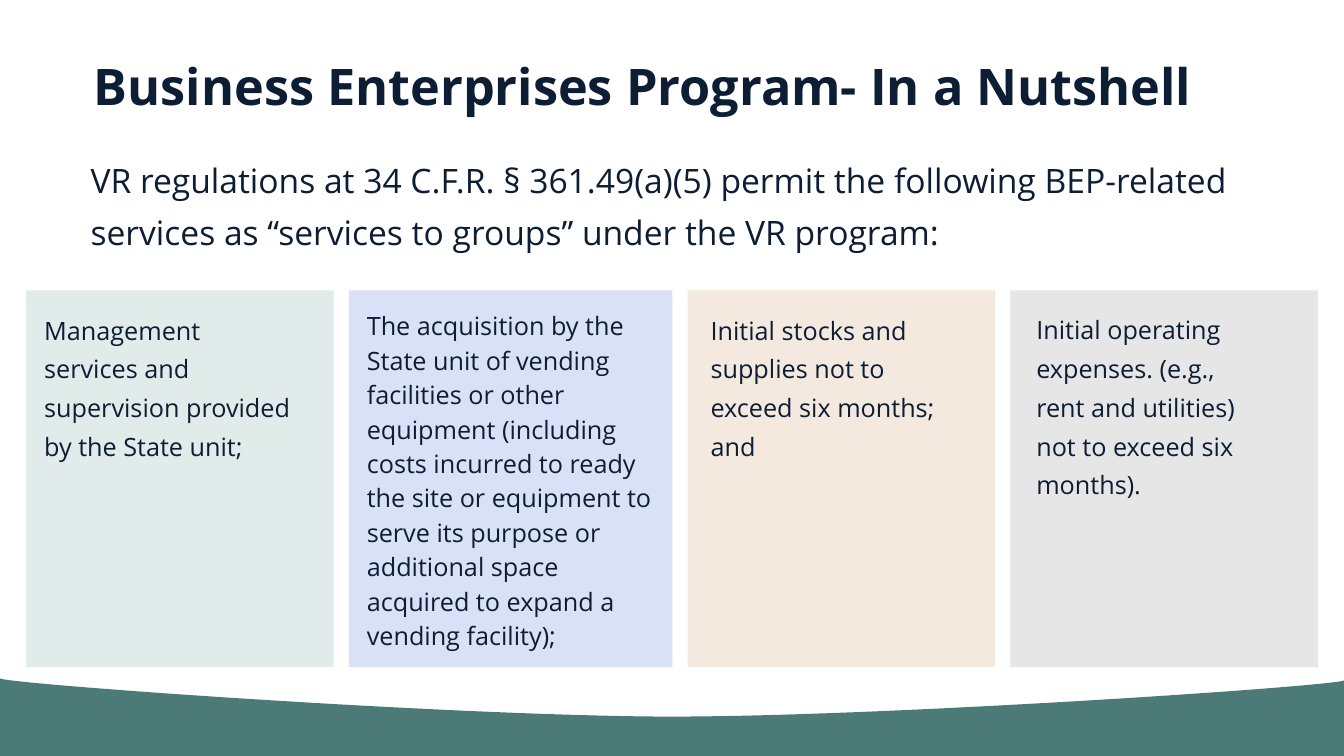
from dataclasses import dataclass

from pptx import Presentation
from pptx.dml.color import RGBColor
from pptx.enum import shapes, text
from pptx.util import Inches, Pt


@dataclass(frozen=True)
class Theme:
    font: str = "Open Sans"
    ink: str = "0D1D34"
    wave: str = "4C7A76"
    title_size: int = 36
    intro_size: int = 24
    card_size: int = 18


@dataclass(frozen=True)
class Box:
    left: float
    top: float
    width: float
    height: float


@dataclass(frozen=True)
class Card:
    words: str
    fill: str
    width: float
    text_offset: float
    text_width: float
    text_height: float
    line_spacing: float = 1.28


THEME = Theme()
SLIDE_WIDTH, SLIDE_HEIGHT = 13.33, 7.5
TITLE_BOX = Box(0.8, 0.4, 11.76, 1.35)
INTRO_BOX = Box(0.8, 1.43, 11.76, 1.13)
CARD_LEFT, CARD_TOP, CARD_HEIGHT, CARD_GAP = 0.26, 2.88, 3.74, 0.15
CARD_TEXT_TOP = 2.99
# Each curve holds a start, two control points and an end.
WAVE_CURVES = (
    ((0, 6.73), (0, 6.78), (4.4, 7.1), (6.62, 7.11)),
    ((6.62, 7.11), (8.85, 7.11), (13.33, 6.8), (13.33, 6.75)),
)
CURVE_STEPS = 40

TITLE = "Business Enterprises Program- In a Nutshell"
INTRO = (
    "VR regulations at 34 C.F.R. § 361.49(a)(5) permit the following BEP-related "
    "services as “services to groups” under the VR program:"
)
CARDS = (
    Card("Management services and supervision provided by the State unit;",
         "E0EBEA", 3.05, 0.08, 2.72, 1.62),
    Card("The acquisition by the State unit of vending facilities or other equipment "
         "(including costs incurred to ready the site or equipment to serve its purpose "
         "or additional space acquired to expand a vending facility);",
         "D9E1F7", 3.21, 0.08, 3.13, 3.53, 1.14),
    Card("Initial stocks and supplies not to exceed six months; and",
         "F3E9DE", 3.05, 0.13, 2.57, 1.62),
    Card("Initial operating expenses. (e.g., rent and utilities) not to exceed six months).",
         "E6E6E6", 3.05, 0.16, 2.38, 2.04),
)


def lengths(box: Box) -> tuple:
    return tuple(Inches(value) for value in (box.left, box.top, box.width, box.height))


def paint(shape, color: str) -> None:
    shape.shadow.inherit = False
    shape.fill.solid()
    shape.fill.fore_color.rgb = RGBColor.from_string(color)
    shape.line.fill.background()


def write(shape, words: str, size: int, line_spacing: float, bold: bool = False,
          inset_x: float = 0.1, inset_y: float = 0.05, grow: bool = False) -> None:
    fit = text.MSO_AUTO_SIZE
    frame = shape.text_frame
    frame_format = {
        "word_wrap": True,
        "auto_size": fit.SHAPE_TO_FIT_TEXT if grow else fit.NONE,
        "vertical_anchor": text.MSO_ANCHOR.TOP,
        "margin_left": Inches(inset_x),
        "margin_right": Inches(inset_x),
        "margin_top": Inches(inset_y),
        "margin_bottom": Inches(inset_y),
    }
    for name, value in frame_format.items():
        setattr(frame, name, value)
    paragraph = frame.paragraphs[0]
    paragraph.alignment = text.PP_ALIGN.LEFT
    paragraph.line_spacing = line_spacing
    run = paragraph.add_run()
    run.text = words
    for name, value in {"name": THEME.font, "size": Pt(size), "bold": bold}.items():
        setattr(run.font, name, value)
    run.font.color.rgb = RGBColor.from_string(THEME.ink)


def curve_point(curve: tuple, t: float) -> tuple[float, float]:
    """Return the point at share t of a cubic Bezier curve."""
    weights = ((1 - t) ** 3, 3 * t * (1 - t) ** 2, 3 * t ** 2 * (1 - t), t ** 3)
    x, y = (sum(w * point[axis] for w, point in zip(weights, curve)) for axis in (0, 1))
    return x, y


def draw_wave(slide) -> None:
    edge = [curve_point(curve, step / CURVE_STEPS)
            for curve in WAVE_CURVES for step in range(CURVE_STEPS + 1)]
    outline = edge + [(SLIDE_WIDTH, SLIDE_HEIGHT), (0, SLIDE_HEIGHT)]
    points = [(Inches(x), Inches(y)) for x, y in outline]
    builder = slide.shapes.build_freeform(*points[0])
    builder.add_line_segments(points[1:], close=True)
    paint(builder.convert_to_shape(), THEME.wave)


def draw_title(slide) -> None:
    title = slide.shapes.title
    title.left, title.top, title.width, title.height = lengths(TITLE_BOX)
    write(title, TITLE, THEME.title_size, 1.02, bold=True, inset_x=0.13, inset_y=0.13)


def draw_card(slide, card: Card, left: float) -> None:
    panel_box = Box(left, CARD_TOP, card.width, CARD_HEIGHT)
    panel = slide.shapes.add_shape(shapes.MSO_SHAPE.RECTANGLE, *lengths(panel_box))
    paint(panel, card.fill)
    text_box = Box(left + card.text_offset, CARD_TEXT_TOP, card.text_width, card.text_height)
    label = slide.shapes.add_textbox(*lengths(text_box))
    write(label, card.words, THEME.card_size, card.line_spacing, grow=True)


def main() -> None:
    presentation = Presentation()
    presentation.slide_width = Inches(SLIDE_WIDTH)
    presentation.slide_height = Inches(SLIDE_HEIGHT)
    slide = presentation.slides.add_slide(presentation.slide_layouts.get_by_name("Title Only"))
    draw_wave(slide)
    draw_title(slide)
    intro = slide.shapes.add_textbox(*lengths(INTRO_BOX))
    write(intro, INTRO, THEME.intro_size, 1.28)
    left = CARD_LEFT
    for card in CARDS:
        draw_card(slide, card, left)
        left += card.width + CARD_GAP
    presentation.save("out.pptx")


if __name__ == "__main__":
    main()
